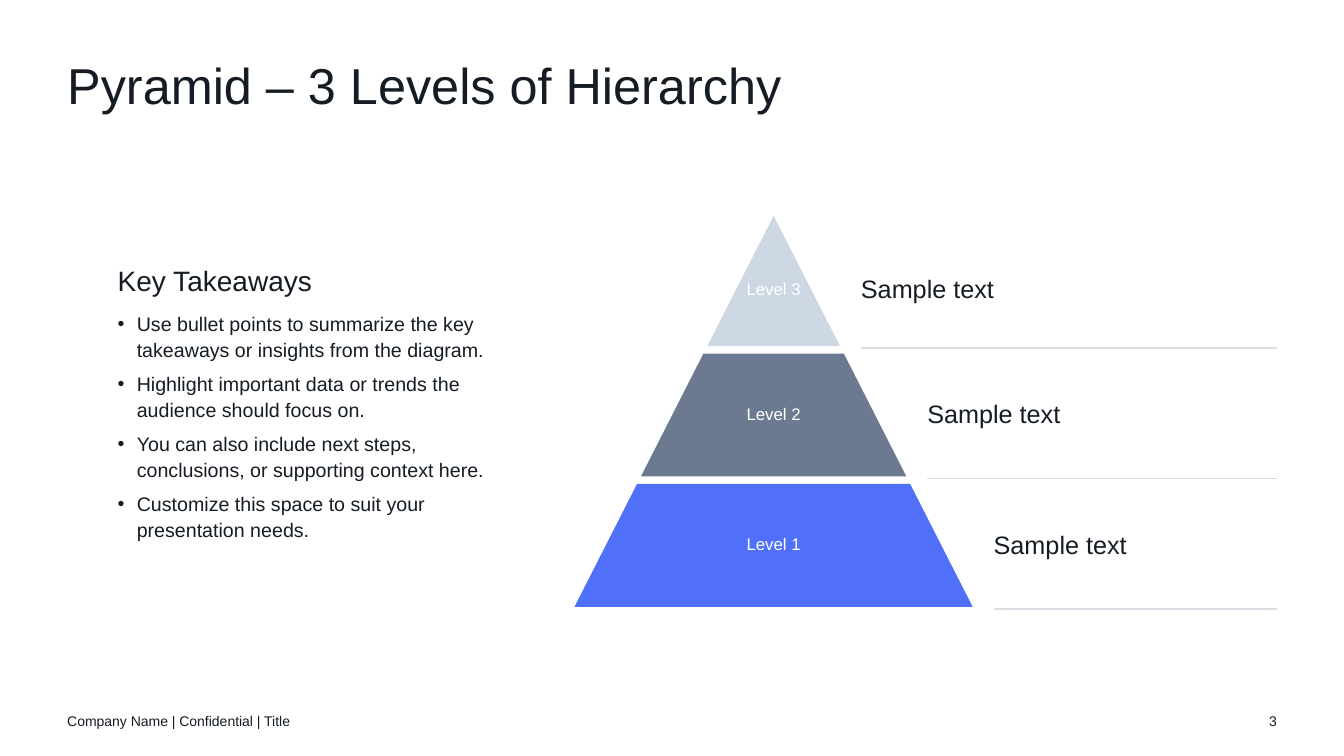
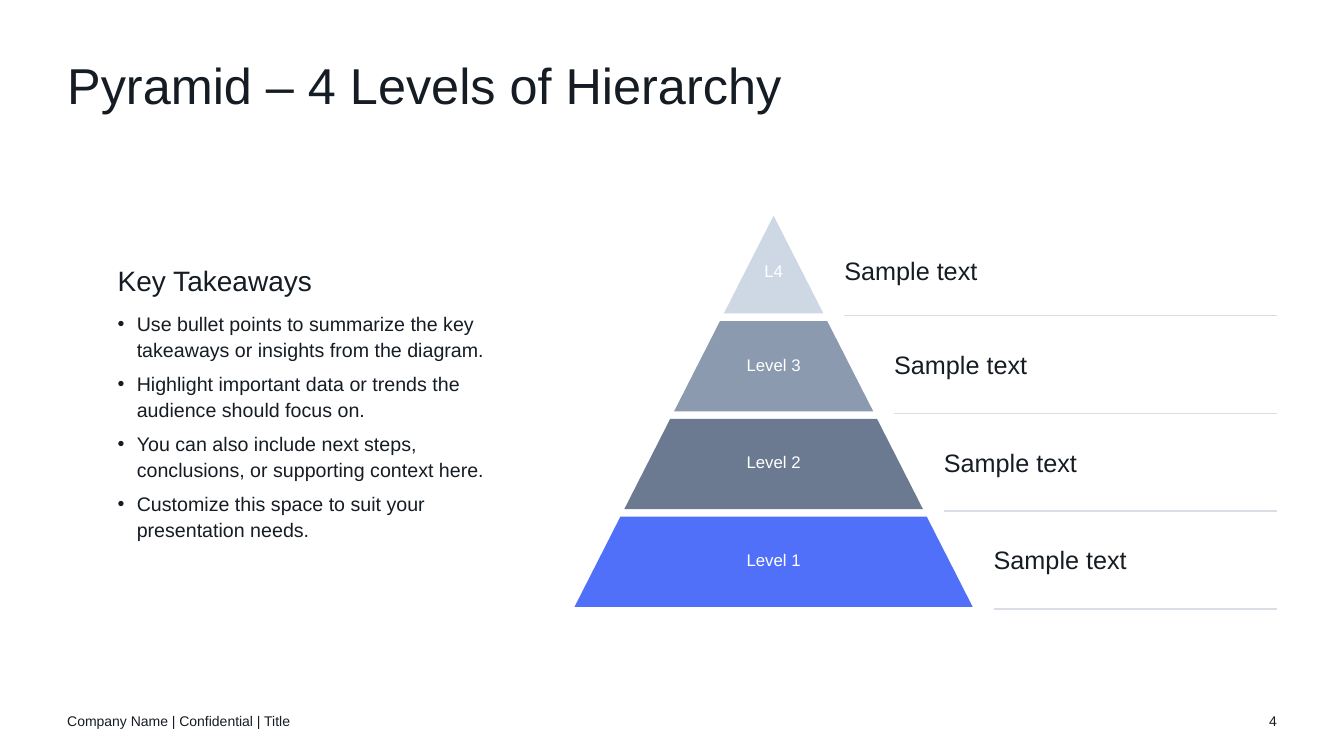
from collections import namedtuple

from lxml import etree
from pptx import Presentation
from pptx import util as u
from pptx.dml.color import RGBColor
from pptx.enum import text
from pptx.oxml import ns

COLORS = {
    "ink": "151C23", "white": "FFFFFF", "rule": "D9DEE5",
    "light": "CED8E4", "mist": "8C9AB0", "slate": "6B7A90", "blue": "5070FA",
}
FONT = "Arial"
WIDTH, HEIGHT = u.Inches(13.33), u.Inches(7.5)
COLUMN, ROW = WIDTH / 80, HEIGHT / 75
MARGIN, RIGHT_EDGE = 4, 76

Box = namedtuple("Box", "left top width height")
TITLE = Box(MARGIN, 6, 72, 6)
FOOTER = Box(MARGIN, 69.5, 27, 4)
NUMBER = Box(73, 69.5, 3, 4)
TAKEAWAYS = Box(7, 18, 24, 43.5)
PYRAMID = Box(34.2, 21.4, 23.7, 38.8)

TITLE_FORMAT = {"size": 36, "line_spacing": 0.9, "anchor": text.MSO_ANCHOR.TOP}
NUMBER_FORMAT = {"size": 10, "alignment": text.PP_ALIGN.RIGHT}
LABEL_FORMAT = {"size": 18, "auto_size": text.MSO_AUTO_SIZE.SHAPE_TO_FIT_TEXT}
LEVEL_FORMAT = {**LABEL_FORMAT, "size": 12, "color": "white",
                "alignment": text.PP_ALIGN.CENTER}
HEADING_FORMAT = {"size": 20, "line_spacing": 1.1, "space_before": u.Pt(6),
                  "space_after": u.Pt(3)}
BULLET_FORMAT = {"size": 14, "line_spacing": 1.1, "space_before": u.Pt(6)}

FOOTER_TEXT = "Company Name | Confidential | Title"
HEADING = "Key Takeaways"
BULLETS = [
    "Use bullet points to summarize the key takeaways or insights from the diagram.",
    "Highlight important data or trends the audience should focus on.",
    "You can also include next steps, conclusions, or supporting context here.",
    "Customize this space to suit your presentation needs.",
]
SLIDES = [
    ("Pyramid – 3 Levels of Hierarchy", 3,
     [("Level 3", "light"), ("Level 2", "slate"), ("Level 1", "blue")]),
    ("Pyramid – 4 Levels of Hierarchy", 4,
     [("L4", "light"), ("Level 3", "mist"), ("Level 2", "slate"), ("Level 1", "blue")]),
]


def rgb(name):
    """Return a named palette colour."""
    return RGBColor.from_string(COLORS[name])


def emu(column, row):
    """Convert a grid point to slide units."""
    return round(column * COLUMN), round(row * ROW)


def format_paragraph(paragraph, words, style):
    """Write words into a paragraph in the given style."""
    run = paragraph.add_run()
    run.text = words
    font = {"name": FONT, "size": u.Pt(style["size"])}
    for key, value in font.items():
        setattr(run.font, key, value)
    run.font.color.rgb = rgb(style.get("color", "ink"))
    for key in ("alignment", "line_spacing", "space_before", "space_after"):
        if key in style:
            setattr(paragraph, key, style[key])


def format_frame(frame, style):
    """Set wrapping, anchor, fit and margins of a text frame."""
    settings = {
        "word_wrap": True,
        "vertical_anchor": style.get("anchor", text.MSO_ANCHOR.MIDDLE),
        "auto_size": style.get("auto_size", text.MSO_AUTO_SIZE.NONE),
        "margin_left": 0, "margin_right": 0, "margin_top": 0, "margin_bottom": 0,
    }
    for key, value in settings.items():
        setattr(frame, key, value)


def add_text(slide, box, words, style):
    """Add a text box on the grid with one styled paragraph."""
    shape = slide.shapes.add_textbox(*emu(box.left, box.top), *emu(box.width, box.height))
    format_frame(shape.text_frame, style)
    format_paragraph(shape.text_frame.paragraphs[0], words, style)
    return shape


def add_bullet(paragraph):
    """Give a paragraph a hanging bullet."""
    properties = paragraph._p.get_or_add_pPr()
    indent = u.Inches(0.19)
    properties.set("marL", str(indent))
    properties.set("indent", str(-indent))
    etree.SubElement(properties, ns.qn("a:buFont")).set("typeface", FONT)
    etree.SubElement(properties, ns.qn("a:buChar")).set("char", "•")


def add_rule(slide, left, right, row):
    """Draw a thin horizontal rule."""
    line = slide.shapes.add_connector(1, *emu(left, row), *emu(right, row))
    line.line.color.rgb = rgb("rule")
    line.line.width = u.Pt(1)
    etree.SubElement(line._element.spPr, ns.qn("a:effectLst"))


def add_frame(slide, title, number):
    """Fill the title, footer and page number."""
    shape = slide.shapes.title
    shape.left, shape.top = emu(TITLE.left, TITLE.top)
    shape.width, shape.height = emu(TITLE.width, TITLE.height)
    format_frame(shape.text_frame, TITLE_FORMAT)
    style = {**TITLE_FORMAT, "alignment": text.PP_ALIGN.LEFT}
    format_paragraph(shape.text_frame.paragraphs[0], title, style)
    add_text(slide, FOOTER, FOOTER_TEXT, {"size": 10})
    add_text(slide, NUMBER, str(number), NUMBER_FORMAT)


def add_takeaways(slide, box):
    """Add the heading and its bullet list."""
    frame = add_text(slide, box, HEADING, HEADING_FORMAT).text_frame
    for words in BULLETS:
        paragraph = frame.add_paragraph()
        format_paragraph(paragraph, words, BULLET_FORMAT)
        add_bullet(paragraph)


def add_level(group, box, top, bottom, color):
    """Cut one level out of the triangle that fills the box."""
    center = box.left + box.width / 2
    upper, lower = ((row - box.top) / box.height * box.width / 2 for row in (top, bottom))
    corners = [(center - upper, top), (center + upper, top),
               (center + lower, bottom), (center - lower, bottom)]
    points = list(dict.fromkeys(emu(*corner) for corner in corners))
    builder = group.shapes.build_freeform(*points[0])
    builder.add_line_segments(points[1:], close=True)
    shape = builder.convert_to_shape()
    shape.shadow.inherit = False
    shape.fill.solid()
    shape.fill.fore_color.rgb = rgb(color)
    shape.line.fill.background()
    return center + lower


def add_pyramid(slide, box, levels):
    """Stack the levels with their names, labels and rules."""
    group = slide.shapes.add_group_shape()
    pitch = box.height / len(levels)
    gap, label_gap, label_height, name_width = 0.75, 1.25, 3, 6
    for index, (name, color) in enumerate(levels):
        bottom = box.top + (index + 1) * pitch
        top = bottom - pitch + (gap if index else 0)
        label_left = add_level(group, box, top, bottom, color) + label_gap
        middle = bottom - pitch * (0.48 if index else 0.44)
        label_top = middle - label_height / 2
        name_left = box.left + (box.width - name_width) / 2
        add_text(slide, Box(name_left, label_top, name_width, label_height),
                 name, LEVEL_FORMAT)
        add_text(slide, Box(label_left, label_top, 16.8, label_height),
                 "Sample text", LABEL_FORMAT)
        add_rule(slide, label_left, RIGHT_EDGE, bottom + 0.2)


def main():
    """Build and save the presentation."""
    presentation = Presentation()
    presentation.slide_width, presentation.slide_height = WIDTH, HEIGHT
    for title, number, levels in SLIDES:
        slide = presentation.slides.add_slide(presentation.slide_layouts[5])
        add_frame(slide, title, number)
        add_takeaways(slide, TAKEAWAYS)
        add_pyramid(slide, PYRAMID, levels)
    presentation.save("out.pptx")


if __name__ == "__main__":
    main()
